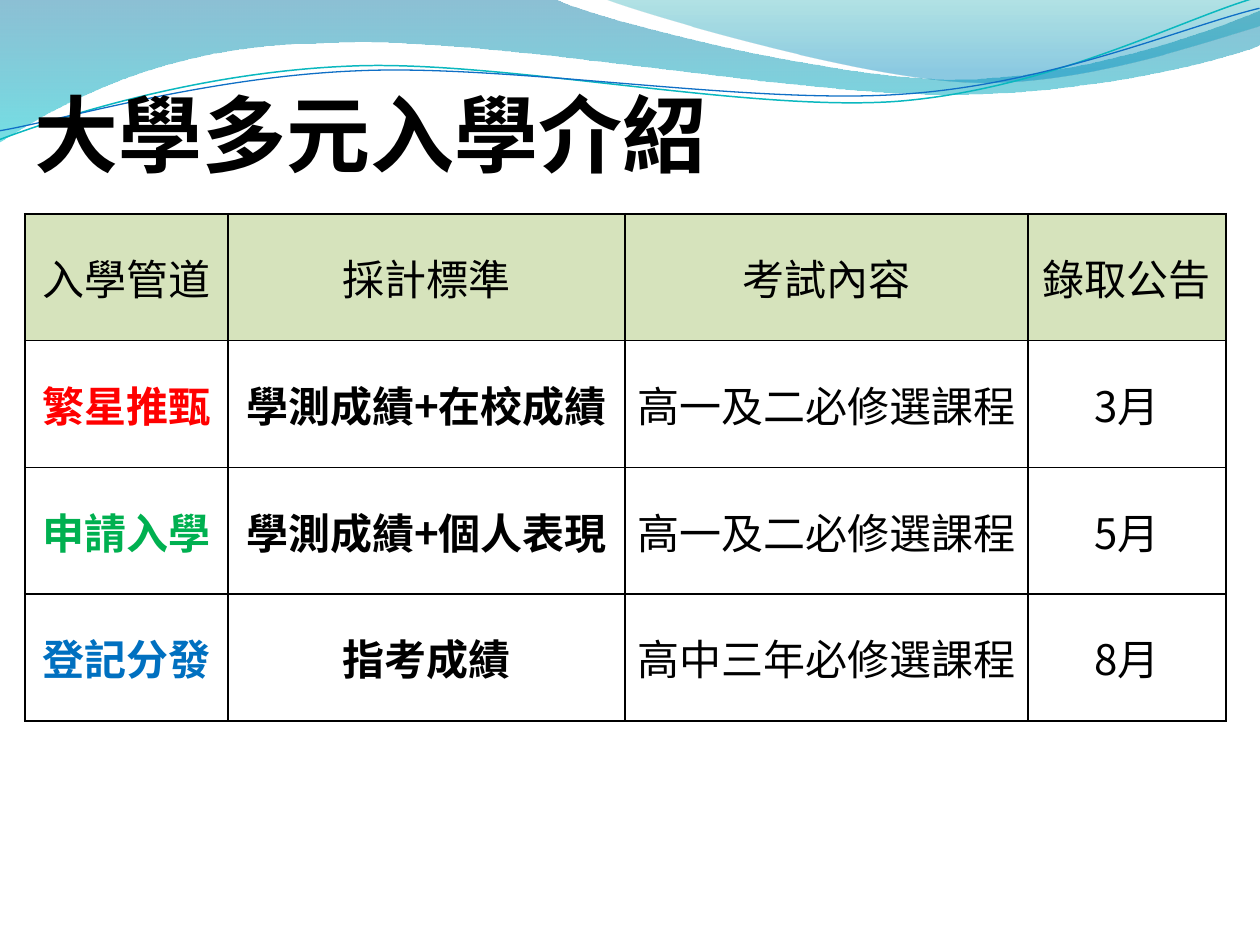
from lxml import etree
from pptx import Presentation
from pptx import util as u
from pptx.dml.color import RGBColor
from pptx.enum import text
from pptx.oxml.ns import qn

PX = 914400 / 126
WIDTH, HEIGHT = 1260, 945
FONT = "Noto Sans CJK SC"

BLACK = RGBColor(0, 0, 0)
WHITE = RGBColor(255, 255, 255)
RED = RGBColor(0xFF, 0, 0)
GREEN = RGBColor(0, 0xB0, 0x50)
BLUE = RGBColor(0, 0x70, 0xC0)
HEADER_GREEN = RGBColor(0xD6, 0xE3, 0xBC)
DEEP_BLUE = RGBColor(0, 0x74, 0xA1)
AQUA = RGBColor(0, 0xC6, 0xCF)
TEAL = RGBColor(0, 0xA1, 0xA9)
SKY = RGBColor(0, 0x8B, 0xBF)
TEAL_LINE = RGBColor(0x0A, 0xB8, 0xBF)
BLUE_LINE = RGBColor(0x0F, 0x6F, 0xC6)

# Each step of an outline holds one point (straight) or three (Bezier curve).
BROAD_WAVE = [
    [(0, -1)], [(554, -1)],
    [(600, 21), (837, 79), (955, 79)], [(1075, 79), (1207, 33), (1260, 11)],
    [(1261, 45)],
    [(1239, 55), (1096, 96), (940, 94)], [(784, 94), (481, 35), (324, 43)],
    [(163, 44), (58, 105), (-1, 142)], [(0, -1)],
]
RIGHT_WAVE = [
    [(604, -1)],
    [(641, 14), (859, 78), (969, 82)], [(1079, 87), (1211, 40), (1260, 26)],
    [(1260, 0)], [(604, -1)],
]
STRAND_TILT = 357.3
TEAL_STRAND = [
    [(-3, 110)],
    [(59, 90), (199, 52), (350, 53)], [(499, 53), (745, 118), (896, 114)],
    [(1049, 109), (1184, 45), (1260, 27)],
]
BLUE_STRAND = [
    [(-2, 101)],
    [(57, 94), (207, 57), (357, 58)], [(509, 58), (750, 111), (902, 107)],
    [(1052, 104), (1188, 52), (1262, 38)],
]

COLUMN_WIDTHS = [203, 397, 403, 198]
HEADINGS = ["入學管道", "採計標準", "考試內容", "錄取公告"]
CHANNELS = [
    ("繁星推甄", "學測成績+在校成績", "高一及二必修選課程", "3月", RED),
    ("申請入學", "學測成績+個人表現", "高一及二必修選課程", "5月", GREEN),
    ("登記分發", "指考成績", "高中三年必修選課程", "8月", BLUE),
]


def px(length):
    return u.Emu(round(length * PX))


def write(frame, words, size=24, color=BLACK, bold=False,
          align=text.PP_ALIGN.LEFT):
    paragraph = frame.paragraphs[0]
    paragraph.alignment = align
    run = paragraph.add_run()
    run.text = words
    font = run.font
    font.size, font.bold, font.name = u.Pt(size), bold, FONT
    font.color.rgb = color
    etree.SubElement(font._element, qn("a:ea"), typeface=FONT)


class Page:
    def __init__(self, slide):
        self.slide = slide
        self.border_color = BLACK
        self.outer_border, self.inner_border = 1.5, 1

    def outline(self, steps, closed):
        """Build a freeform, then join the segments of each curve into one Bezier."""
        points = [point for step in steps for point in step]
        builder = self.slide.shapes.build_freeform(*points[0], scale=PX)
        builder.add_line_segments(points[1:], close=closed)
        shape = builder.convert_to_shape()
        shape.shadow.inherit = False
        segments = iter(list(shape._element.iter(qn("a:lnTo"))))
        for step in steps[1:]:
            parts = [next(segments) for _ in step]
            if len(parts) == 3:
                curve = etree.Element(qn("a:cubicBezTo"))
                parts[0].addprevious(curve)
                for part in parts:
                    curve.append(part[0])
                    part.getparent().remove(part)
        return shape

    def wave(self, steps, stops):
        """Fill an outline from top to bottom; stops are (position, colour, opacity %)."""
        shape = self.outline(steps, True)
        shape.line.fill.background()
        shape.fill.gradient()
        shape.fill.gradient_angle = 270
        for stop, (position, color, _) in zip(shape.fill.gradient_stops, stops):
            stop.position = position
            stop.color.rgb = color
        colors = shape._element.spPr.iter(qn("a:srgbClr"))
        for node, (_, _, opacity) in zip(colors, stops):
            etree.SubElement(node, qn("a:alpha"), val=str(opacity * 1000))

    def strand(self, steps, color, weight):
        shape = self.outline(steps, False)
        shape.rotation = STRAND_TILT
        shape.fill.background()
        shape.line.color.rgb = color
        shape.line.width = u.Pt(weight)

    def title(self, words, left, top, width, height):
        box = self.slide.shapes.add_textbox(*map(px, (left, top, width, height)))
        frame = box.text_frame
        frame.word_wrap = True
        frame.vertical_anchor = text.MSO_ANCHOR.BOTTOM
        frame.margin_left = frame.margin_right = frame.margin_bottom = 0
        frame.margin_top = px(6)
        write(frame, words, size=48, bold=True)

    def table(self, left, top, widths, height, row_count):
        frame = self.slide.shapes.add_table(
            row_count, len(widths), px(left), px(top), px(sum(widths)), px(height))
        grid = frame.table
        for column, width in zip(grid.columns, widths):
            column.width = px(width)
        for row in grid.rows:
            row.height = px(height / row_count)
        return grid

    def cell(self, grid, row, col, words, fill=None, **style):
        cell = grid.cell(row, col)
        cell.vertical_anchor = text.MSO_ANCHOR.MIDDLE
        cell.margin_left = cell.margin_right = px(9)
        cell.margin_top = cell.margin_bottom = 0
        if fill is None:
            cell.fill.background()
        else:
            cell.fill.solid()
            cell.fill.fore_color.rgb = fill
        write(cell.text_frame, words, align=text.PP_ALIGN.CENTER, **style)
        self.borders(cell, {
            "L": col == 0, "R": col == len(grid.columns) - 1,
            "T": row == 0, "B": row == len(grid.rows) - 1})

    def borders(self, cell, outer_sides):
        properties = cell._tc.get_or_add_tcPr()
        for i, (side, outer) in enumerate(outer_sides.items()):
            weight = self.outer_border if outer else self.inner_border
            line = etree.Element(qn("a:ln" + side), w=str(u.Pt(weight)))
            solid = etree.SubElement(line, qn("a:solidFill"))
            etree.SubElement(solid, qn("a:srgbClr"), val=str(self.border_color))
            properties.insert(i, line)


def main():
    deck = Presentation()
    deck.slide_width, deck.slide_height = px(WIDTH), px(HEIGHT)
    slide = deck.slides.add_slide(deck.slide_layouts[6])
    slide.background.fill.solid()
    slide.background.fill.fore_color.rgb = WHITE
    page = Page(slide)

    page.wave(BROAD_WAVE, [(0, DEEP_BLUE, 45), (1, AQUA, 55)])
    page.wave(RIGHT_WAVE, [(0, TEAL, 30), (0.8, SKY, 45)])
    page.strand(TEAL_STRAND, TEAL_LINE, 0.85)
    page.strand(BLUE_STRAND, BLUE_LINE, 0.75)
    page.title("大學多元入學介紹", 35, 26, 1134, 157)

    grid = page.table(25, 214, COLUMN_WIDTHS, 507, 1 + len(CHANNELS))
    for col, heading in enumerate(HEADINGS):
        page.cell(grid, 0, col, heading, fill=HEADER_GREEN)
    for row, (channel, standard, content, month, color) in enumerate(CHANNELS, 1):
        page.cell(grid, row, 0, channel, color=color, bold=True)
        page.cell(grid, row, 1, standard, bold=True)
        page.cell(grid, row, 2, content)
        page.cell(grid, row, 3, month)

    deck.save("out.pptx")


if __name__ == "__main__":
    main()
